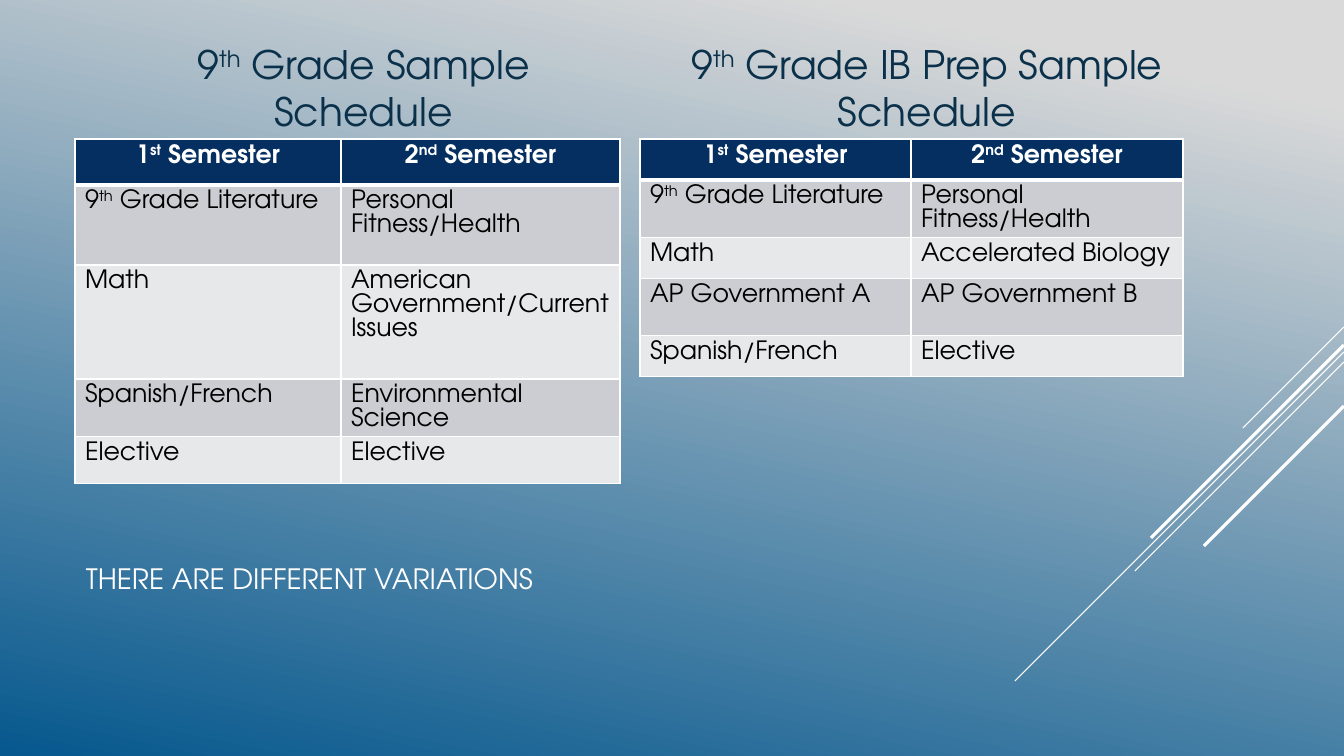
from lxml.etree import SubElement
from pptx import Presentation
from pptx.dml.color import RGBColor
from pptx.enum.shapes import MSO_CONNECTOR as Connector
from pptx.enum.text import MSO_ANCHOR as Anchor, PP_ALIGN as Align
from pptx.oxml.ns import qn
from pptx.util import Emu, Pt

WIDTH, HEIGHT = 1344, 756
NAVY, INK, WHITE, BLACK = "052F61", "0A304A", "FFFFFF", "000000"
BANDS = ["CCCDD2", "E7E8EA"]


def px(length):
    return Emu(round(length * 914400 / 100.8))


def color(code):
    return RGBColor.from_string(code)


class SlideBuilder:
    font_name = "TeX Gyre Adventor"

    def __init__(self, slide):
        self.slide = slide

    def background(self, start, end, angle):
        fill = self.slide.background.fill
        fill.gradient()
        fill.gradient_angle = 360 - angle
        for stop, (position, code) in zip(fill.gradient_stops, (start, end)):
            stop.position = position
            stop.color.rgb = color(code)

    def wording(self, frame, text, size, code, bold=False, **layout):
        paragraph = frame.paragraphs[0]
        for name, value in layout.items():
            setattr(paragraph, name, value)
        style = {"name": self.font_name, "size": Pt(size), "bold": bold}
        for index, part in enumerate(text.split("^")):
            run = paragraph.add_run()
            run.text = part
            for name, value in style.items():
                setattr(run.font, name, value)
            run.font.color.rgb = color(code)
            if index % 2:
                run._r.get_or_add_rPr().set("baseline", "30000")

    def text(self, box, text, size, code, anchor, **layout):
        frame = self.slide.shapes.add_textbox(*map(px, box)).text_frame
        frame.word_wrap = True
        frame.vertical_anchor = anchor
        self.wording(frame, text, size, code, **layout)

    def diagonal(self, top, length, weight):
        line = self.slide.shapes.add_connector(
            Connector.STRAIGHT, px(WIDTH), px(top), px(WIDTH - length), px(top + length))
        line.line.color.rgb = color(WHITE)
        line.line.width = Pt(weight)
        SubElement(line._element.spPr, qn("a:effectLst"))

    def borders(self, cell, weights):
        properties = cell._tc.get_or_add_tcPr()
        for side, weight in weights.items():
            edge = SubElement(properties, qn(f"a:ln{side}"), w=str(Pt(weight)))
            fill = SubElement(edge, qn("a:solidFill"))
            SubElement(fill, qn("a:srgbClr"), val=WHITE)

    def table(self, left, top, widths, heights, rows):
        table = self.slide.shapes.add_table(
            len(rows), len(widths), px(left), px(top),
            px(sum(widths)), px(sum(heights))).table
        for column, width in zip(table.columns, widths):
            column.width = px(width)
        for row, height in zip(table.rows, heights):
            row.height = px(height)
        for r, texts in enumerate(rows):
            header = r == 0
            for c, text in enumerate(texts):
                cell = table.cell(r, c)
                self.borders(cell, {"L": 1, "R": 1, "T": 3 if r == 1 else 1,
                                    "B": 3 if header else 1})
                cell.fill.solid()
                cell.fill.fore_color.rgb = color(NAVY if header else BANDS[(r - 1) % 2])
                self.wording(cell.text_frame, text, 18, WHITE if header else BLACK, header,
                             alignment=Align.CENTER if header else Align.LEFT,
                             line_spacing=Pt(17))


def main():
    presentation = Presentation()
    presentation.slide_width, presentation.slide_height = px(WIDTH), px(HEIGHT)
    builder = SlideBuilder(presentation.slides.add_slide(presentation.slide_layouts[6]))
    builder.background((0.1, "D9D9D9"), (1, "06588E"), 102)

    for top, length, weight in [(327, 101, 0.75), (352, 329, 0.75), (362, 209, 0.75),
                                (345, 193, 2.25), (406, 140, 2.25)]:
        builder.diagonal(top, length, weight)

    builder.text((76, 495, 1173, 166), "THERE ARE DIFFERENT VARIATIONS", 20, WHITE,
                 Anchor.MIDDLE)

    semesters = ["1^st^ Semester", "2^nd^ Semester"]
    first_class = ["9^th^ Grade Literature", "Personal Fitness/Health"]
    schedules = [
        ("9^th^ Grade Sample Schedule", 107, 513, 75, [266, 279], [46, 80, 114, 57, 47], [
            ["Math", "American Government/Current Issues"],
            ["Spanish/French", "Environmental Science"],
            ["Elective", "Elective"],
        ]),
        ("9^th^ Grade IB Prep Sample Schedule", 670, 514, 640, [271, 272], [41, 57, 41, 57, 41], [
            ["Math", "Accelerated Biology"],
            ["AP Government A", "AP Government B"],
            ["Spanish/French", "Elective"],
        ]),
    ]
    for heading, heading_left, heading_width, left, widths, heights, classes in schedules:
        builder.text((heading_left, 76, heading_width, 63), heading, 28, INK, Anchor.BOTTOM,
                     alignment=Align.CENTER, line_spacing=Pt(33.5))
        builder.table(left, 139, widths, heights, [semesters, first_class, *classes])

    presentation.save("out.pptx")


if __name__ == "__main__":
    main()
